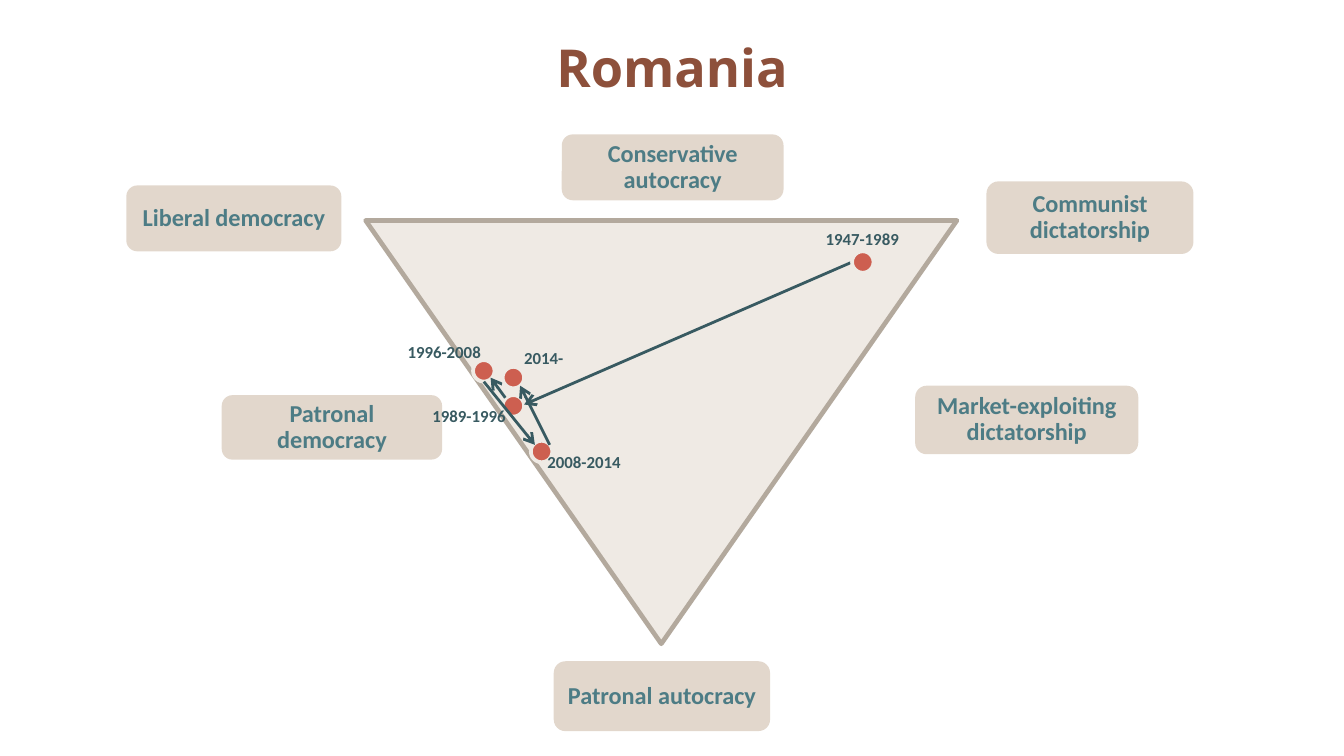
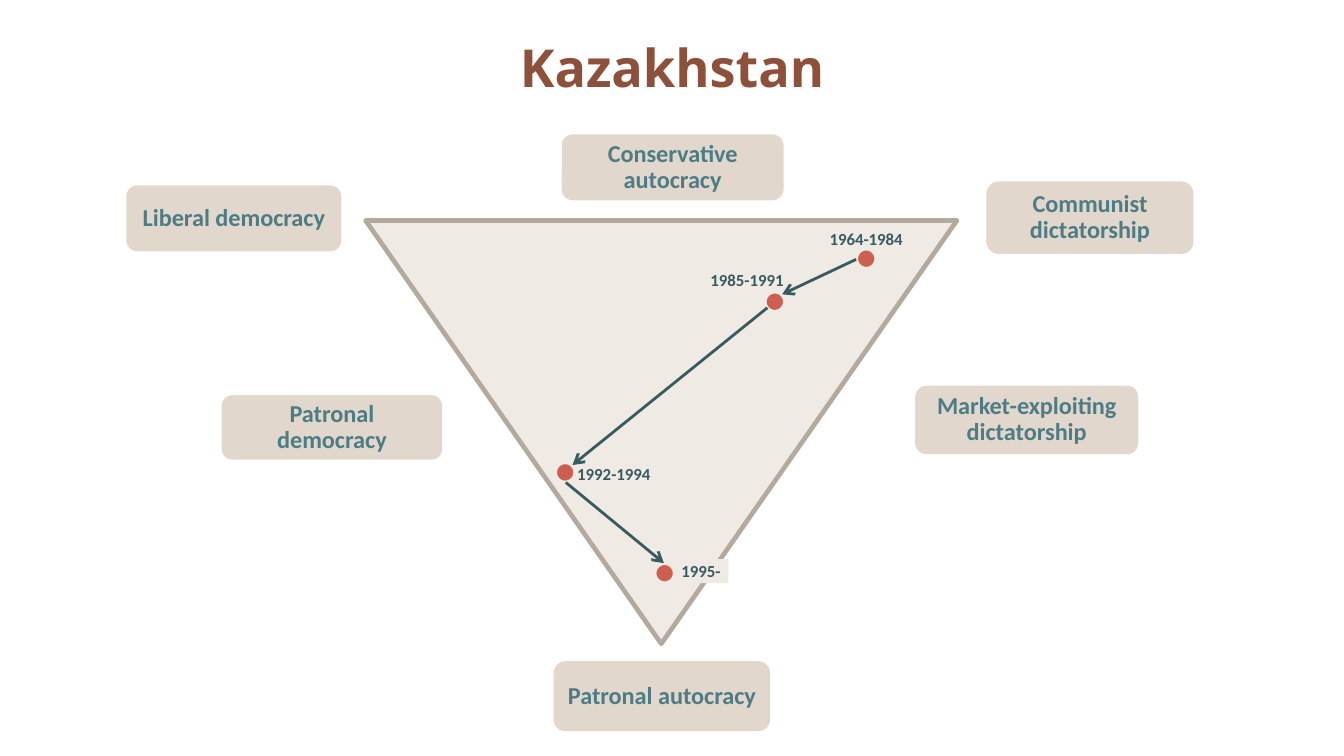
from lxml import etree
from pptx import Presentation
from pptx import util as u
from pptx.dml.color import RGBColor
from pptx.enum import shapes, text
from pptx.oxml import ns

PX = 9144  # 100 px to the inch

WHITE = RGBColor(0xFF, 0xFF, 0xFF)
CREAM = RGBColor(0xEF, 0xEA, 0xE4)
SAND = RGBColor(0xC7, 0xB0, 0x9A)
TAUPE = RGBColor(0xB3, 0xA9, 0x9D)
TEAL = RGBColor(0x4D, 0x7C, 0x85)
DARK_TEAL = RGBColor(0x38, 0x5A, 0x61)
BROWN = RGBColor(0x8D, 0x50, 0x3B)
CORAL = RGBColor(0xCD, 0x5F, 0x50)

LEFT, CENTER, RIGHT = text.PP_ALIGN.LEFT, text.PP_ALIGN.CENTER, text.PP_ALIGN.RIGHT

REGIMES = [
    ("Communist dictatorship", (734, 135, 154, 54)),
    ("Liberal democracy", (94, 138, 160, 49)),
    ("Patronal autocracy", (412, 492, 161, 52)),
    ("Conservative autocracy", (418, 100, 165, 49)),
    ("Market-exploiting dictatorship", (681, 287, 166, 51)),
    ("Patronal democracy", (165, 294, 164, 48)),
]


def px(*lengths):
    return [u.Emu(n * PX) for n in lengths]


def write(sp, words, size=9, color=DARK_TEAL, font="Calibri", align=CENTER,
          inset=0, spacing=None):
    tf = sp.text_frame
    tf.word_wrap = True
    tf.vertical_anchor = text.MSO_ANCHOR.MIDDLE
    tf.margin_left = tf.margin_right = u.Emu(inset * PX)
    tf.margin_top = tf.margin_bottom = 0
    p = tf.paragraphs[0]
    p.alignment = align
    p.line_spacing = spacing
    r = p.add_run()
    r.text = words
    r.font.name, r.font.size, r.font.bold = font, u.Pt(size), True
    r.font.color.rgb = color


class Deck:
    def __init__(self, prs):
        self.prs = prs
        self.s = None

    def new_slide(self, title):
        """Start a slide with its title and the triangle of regime types."""
        self.s = self.prs.slides.add_slide(self.prs.slide_layouts[5])
        self.s.background.fill.solid()
        self.s.background.fill.fore_color.rgb = WHITE
        self.triangle()
        for name, box in REGIMES:
            self.regime(name, box)
        sp = self.s.shapes.title
        sp.left, sp.top, sp.width, sp.height = px(12, 0, 976, 99)
        write(sp, title, size=28, color=BROWN, font="Open Sans", inset=10)
        # keep the title above the diagram
        self.s.shapes._spTree.append(sp._element)

    def shape(self, kind, box, fill, line=None, width=0):
        sp = self.s.shapes.add_shape(kind, *px(*box))
        sp.shadow.inherit = False
        sp.fill.solid()
        sp.fill.fore_color.rgb = fill
        if line is None:
            sp.line.fill.background()
        else:
            sp.line.color.rgb = line
            sp.line.width = u.Pt(width)
        return sp

    def triangle(self):
        sp = self.shape(shapes.MSO_SHAPE.ISOSCELES_TRIANGLE,
                        (272, 164, 440, 315), CREAM, TAUPE, 2.5)
        sp.rotation = 180
        etree.SubElement(sp.line._ln, ns.qn("a:round"))

    def regime(self, name, box):
        sp = self.shape(shapes.MSO_SHAPE.ROUNDED_RECTANGLE, box, SAND)
        color = sp._element.spPr.find(ns.qn("a:solidFill"))[0]
        etree.SubElement(color, ns.qn("a:alpha"), val="50000")
        write(sp, name, size=13, color=TEAL, inset=8, spacing=0.9)

    def dot(self, x, y, size):
        self.shape(shapes.MSO_SHAPE.OVAL, (x, y, size, size), CORAL, CREAM, 2)

    def arrow(self, *ends):
        c = self.s.shapes.add_connector(shapes.MSO_CONNECTOR.STRAIGHT, *px(*ends))
        c.line.color.rgb = DARK_TEAL
        c.line.width = u.Pt(1.5)
        etree.SubElement(c.line._ln, ns.qn("a:tailEnd"), type="arrow")
        etree.SubElement(c._element.spPr, ns.qn("a:effectLst"))

    def period(self, years, box, align=CENTER, inset=0, filled=False):
        if filled:
            sp = self.shape(shapes.MSO_SHAPE.RECTANGLE, box, CREAM)
        else:
            sp = self.s.shapes.add_textbox(*px(*box))
        write(sp, years, align=align, inset=inset)


def romania(deck):
    deck.new_slide("Romania")
    for x, y in [(374, 294), (352, 268), (395, 328)]:
        deck.dot(x, y, 16)
    deck.arrow(634, 195, 390, 301)
    deck.arrow(360, 284, 398, 331)
    deck.period("1947-1989", (602, 165, 79, 25))
    deck.period("1989-1996", (311, 297, 76, 25))
    deck.period("1996-2008", (291, 249, 79, 25))
    deck.period("2014-", (379, 254, 50, 25), align=RIGHT, inset=10, filled=True)
    deck.period("2008-2014", (395, 331, 79, 25))
    deck.dot(374, 273, 16)
    deck.arrow(409, 331, 387, 287)
    deck.dot(634, 187, 16)
    deck.arrow(376, 296, 365, 281)


def kazakhstan(deck):
    deck.new_slide("Kazakhstan")
    for x, y in [(637, 185), (569, 217), (413, 344), (487, 419)]:
        deck.dot(x, y, 15)
    deck.arrow(637, 193, 582, 219)
    deck.arrow(571, 229, 426, 346)
    deck.arrow(421, 359, 494, 419)
    deck.period("1964-1984", (613, 170, 63, 15))
    deck.period("1985-1991", (524, 198, 59, 20), align=RIGHT)
    deck.period("1992-1994", (426, 344, 58, 17), align=RIGHT)
    deck.period("1995-", (507, 416, 35, 18), align=LEFT, filled=True)


def main():
    prs = Presentation()
    prs.slide_width = u.Inches(10)
    prs.slide_height = u.Emu(prs.slide_width * 9 // 16)
    deck = Deck(prs)
    romania(deck)
    kazakhstan(deck)
    prs.save("out.pptx")


if __name__ == "__main__":
    main()
